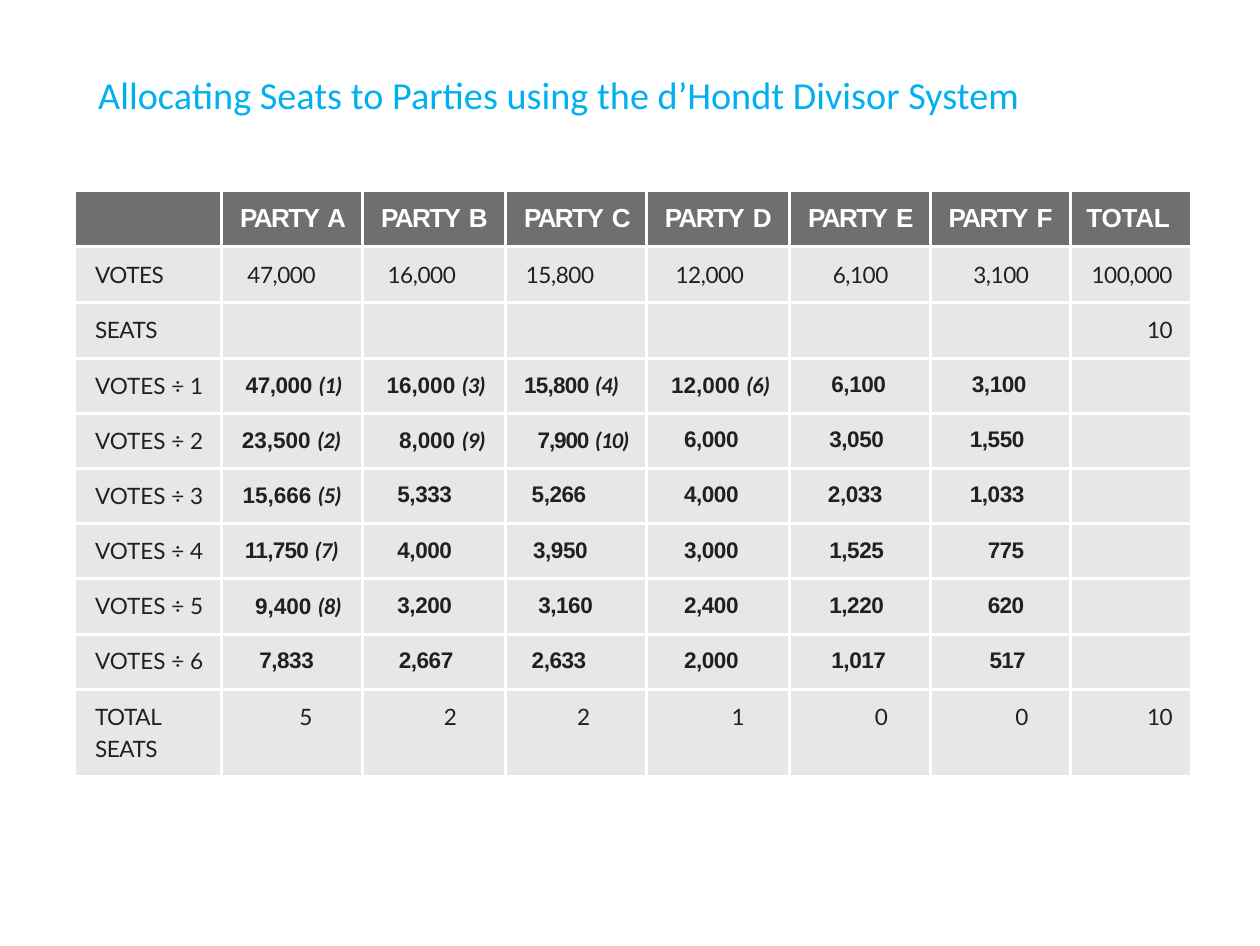
"""Build a slide with the d'Hondt seat allocation table."""
from dataclasses import dataclass

from lxml import etree
from pptx import Presentation
from pptx.dml.color import RGBColor
from pptx.enum.text import PP_ALIGN
from pptx.oxml.ns import qn
from pptx.util import Pt

LEFT, CENTER, RIGHT = PP_ALIGN.LEFT, PP_ALIGN.CENTER, PP_ALIGN.RIGHT


@dataclass(frozen=True)
class Theme:
    """Colours, fonts and type sizes."""
    title: str = "00B0F0"
    head: str = "6D6F71"
    body: str = "E6E7E8"
    ink: str = "231F20"
    white: str = "FFFFFF"
    title_font: str = "Calibri"
    number_font: str = "Arial"
    label_font: str = "Lato"
    title_size: float = 11
    head_size: float = 7.5
    body_size: float = 6.5
    border: float = 1


class SlideBuilder:
    """Holds the theme and the current slide."""

    def __init__(self, prs, theme):
        self.theme = theme
        self.s = prs.slides.add_slide(prs.slide_layouts[6])

    def run(self, p, text, font, size, color, bold=False, italic=False, spacing=0):
        """Add one styled run."""
        r = p.add_run()
        r.text = text
        f = r.font
        f.name, f.size, f.bold, f.italic = font, Pt(size), bold, italic
        f.color.rgb = RGBColor.from_string(color)
        r._r.get_or_add_rPr().set("spc", str(round(spacing * 100)))

    def paragraph(self, p, indent=0, before=0, align=LEFT):
        """Set the layout of a paragraph."""
        p.alignment = align
        p.space_before = Pt(before)
        pPr = p._p.get_or_add_pPr()
        pPr.set("marL", str(Pt(indent)))
        pPr.set("indent", "0")

    def title(self, text, left, top, width, height):
        """Add the slide title."""
        t = self.theme
        tf = self.s.shapes.add_textbox(Pt(left), Pt(top), Pt(width), Pt(height)).text_frame
        tf.word_wrap = True
        tf.margin_left = tf.margin_right = tf.margin_bottom = 0
        tf.margin_top = Pt(0.9)
        p = tf.paragraphs[0]
        self.paragraph(p, 0.9, 0.9)
        self.run(p, text, t.title_font, t.title_size, t.title)

    def table(self, left, top, widths, heights):
        """Add an unbanded table."""
        frame = self.s.shapes.add_table(len(heights), len(widths), Pt(left), Pt(top),
                                        Pt(sum(widths)), Pt(sum(heights)))
        tbl = frame.table
        tbl.first_row = tbl.horz_banding = False
        for column, width in zip(tbl.columns, widths):
            column.width = Pt(width)
        for row, height in zip(tbl.rows, heights):
            row.height = Pt(height)
        return tbl

    def cell(self, cell, fill, top=4, indent=0, align=LEFT, right=5):
        """Style a cell and return its paragraph."""
        outer = {0: "lnL", len(WIDTHS) - 1: "lnR"}.get(cell._tc.col_idx)
        tcPr = cell._tc.get_or_add_tcPr()
        for side in ("lnL", "lnR", "lnT", "lnB"):
            ln = etree.SubElement(tcPr, qn(f"a:{side}"), w=str(Pt(self.theme.border)))
            if side == outer:
                etree.SubElement(ln, qn("a:noFill"))
            else:
                solid = etree.SubElement(ln, qn("a:solidFill"))
                etree.SubElement(solid, qn("a:srgbClr"), val=self.theme.white)
        cell.fill.solid()
        cell.fill.fore_color.rgb = RGBColor.from_string(fill)
        cell.margin_left = cell.margin_bottom = 0
        cell.margin_right = Pt(right if align == RIGHT else 0)
        cell.margin_top = Pt(top)
        p = cell.text_frame.paragraphs[0]
        self.paragraph(p, indent, top, align)
        return p

    def empty(self, cell, fill):
        """Style a cell without text."""
        p = self.cell(cell, fill)
        etree.SubElement(p._p, qn("a:endParaRPr"), sz=str(round(self.theme.body_size * 100)))

    def head(self, cell, runs, indent=5.3, align=LEFT):
        """Fill a header cell from pairs of text and spacing."""
        t = self.theme
        p = self.cell(cell, t.head, 3.8, indent, align, 5.8)
        for text, spacing in runs:
            self.run(p, text, t.number_font, t.head_size, t.white, True, spacing=spacing)

    def label(self, cell, text, top=4, indent=5.4, align=LEFT, spacing=-0.1):
        """Fill a plain body cell and return its paragraph."""
        t = self.theme
        p = self.cell(cell, t.body, top, indent, align)
        self.run(p, text, t.label_font, t.body_size, t.ink, spacing=spacing)
        return p

    def quotient(self, cell, text, indent):
        """Fill a cell with a quotient and, if it wins a seat, its rank."""
        t = self.theme
        p = self.cell(cell, t.body, 4, indent)
        number, bracket, rank = text.partition("(")
        plain = 0 if rank else -0.1 if "," in number else -0.2
        self.run(p, number, t.number_font, t.body_size, t.ink, True,
                 spacing=TIGHT.get(number.strip(), plain))
        if rank:
            self.run(p, bracket + rank, t.title_font, t.body_size, t.ink, True, True, -0.2)


WIDTHS = [41.9, 40.6, 41.2, 40.6, 41.3, 40.5, 40.5, 34.3]
HEIGHTS = [16, 16.3, 16.1] + [15.9] * 6 + [25.3]
VOTES = [("47,000", 7.4), ("16,000", 7.2), ("15,800", 5.8),
         ("12,000", 8.4), ("6,100", 12.4), ("3,100", 12.4)]
TIGHT = {"47,000": -0.1, "15,800": -0.2, "7,900": -0.3, "11,750": -0.2}
QUOTIENTS = [
    [("47,000 (1)", 6.9), ("16,000 (3)", 6.9), ("15,800 (4)", 5.3),
     ("12,000 (6)", 7.1), ("6,100", 12), ("3,100", 12)],
    [("23,500 (2)", 5.8), ("8,000 (9)", 10.5), ("7,900 (10)", 9.2),
     ("6,000", 10.8), ("3,050", 11.4), ("1,550", 11.4)],
    [("15,666 (5)", 6), ("5,333", 10), ("5,266", 7.5),
     ("4,000", 10.8), ("2,033", 11), ("1,033", 11.4)],
    [("11,750 (7)", 6.7), ("4,000", 10), ("3,950", 7.9),
     ("3,000", 10.8), ("1,525", 11.4), ("775", 16.6)],
    [("9,400 (8)", 9.6), ("3,200", 10), ("3,160", 9.4),
     ("2,400", 10.8), ("1,220", 11.4), ("620", 16.6)],
    [("7,833", 10.8), ("2,667", 10.4), ("2,633", 7.5),
     ("2,000", 10.8), ("1,017", 12), ("517", 17.1)],
]
SEATS = [("5", 7.9, CENTER), ("2", 9.4, CENTER), ("2", 4.3, CENTER),
         ("1", 24.5, LEFT), ("0", 24.5, LEFT), ("0", 24.5, LEFT)]


def main():
    """Build and save the slide."""
    prs = Presentation()
    prs.slide_width, prs.slide_height = Pt(363), Pt(272.5)
    theme = Theme()
    b = SlideBuilder(prs, theme)
    b.title("Allocating Seats to Parties using the d’Hondt Divisor System",
            27.4, 19.7, 280.8, 14.4)
    tbl = b.table(22, 54.9, WIDTHS, HEIGHTS)
    last_row, last_col = len(HEIGHTS) - 1, len(WIDTHS) - 1

    b.empty(tbl.cell(0, 0), theme.head)
    for col, party in enumerate("ABCDEF", 1):
        b.head(tbl.cell(0, col), [("PARTY", -0.5), (f" {party}", 0.2)])
    b.head(tbl.cell(0, last_col), [("TOTAL", -0.1)], 0, RIGHT)

    b.label(tbl.cell(1, 0), "VOTES", 4.5)
    for col, (votes, indent) in enumerate(VOTES, 1):
        b.label(tbl.cell(1, col), votes, 4.5, indent)
    b.label(tbl.cell(1, last_col), "100,000", 4.5, 0, RIGHT)

    b.label(tbl.cell(2, 0), "SEATS")
    for col in range(1, last_col):
        b.empty(tbl.cell(2, col), theme.body)

    for divisor, quotients in enumerate(QUOTIENTS, 1):
        row = divisor + 2
        b.label(tbl.cell(row, 0), f"VOTES ÷ {divisor}", spacing=0)
        for col, (text, indent) in enumerate(quotients, 1):
            b.quotient(tbl.cell(row, col), text, indent)
        b.empty(tbl.cell(row, last_col), theme.body)

    p = b.label(tbl.cell(last_row, 0), "TOTAL SEATS", 2.4)
    p.line_spacing = 1.21
    for col, (seats, indent, align) in enumerate(SEATS, 1):
        b.label(tbl.cell(last_row, col), seats, 4, indent, align, -0.5)
    for row in (2, last_row):
        b.label(tbl.cell(row, last_col), "10", 4, 0, RIGHT, -0.2)

    prs.save("out.pptx")


if __name__ == "__main__":
    main()
